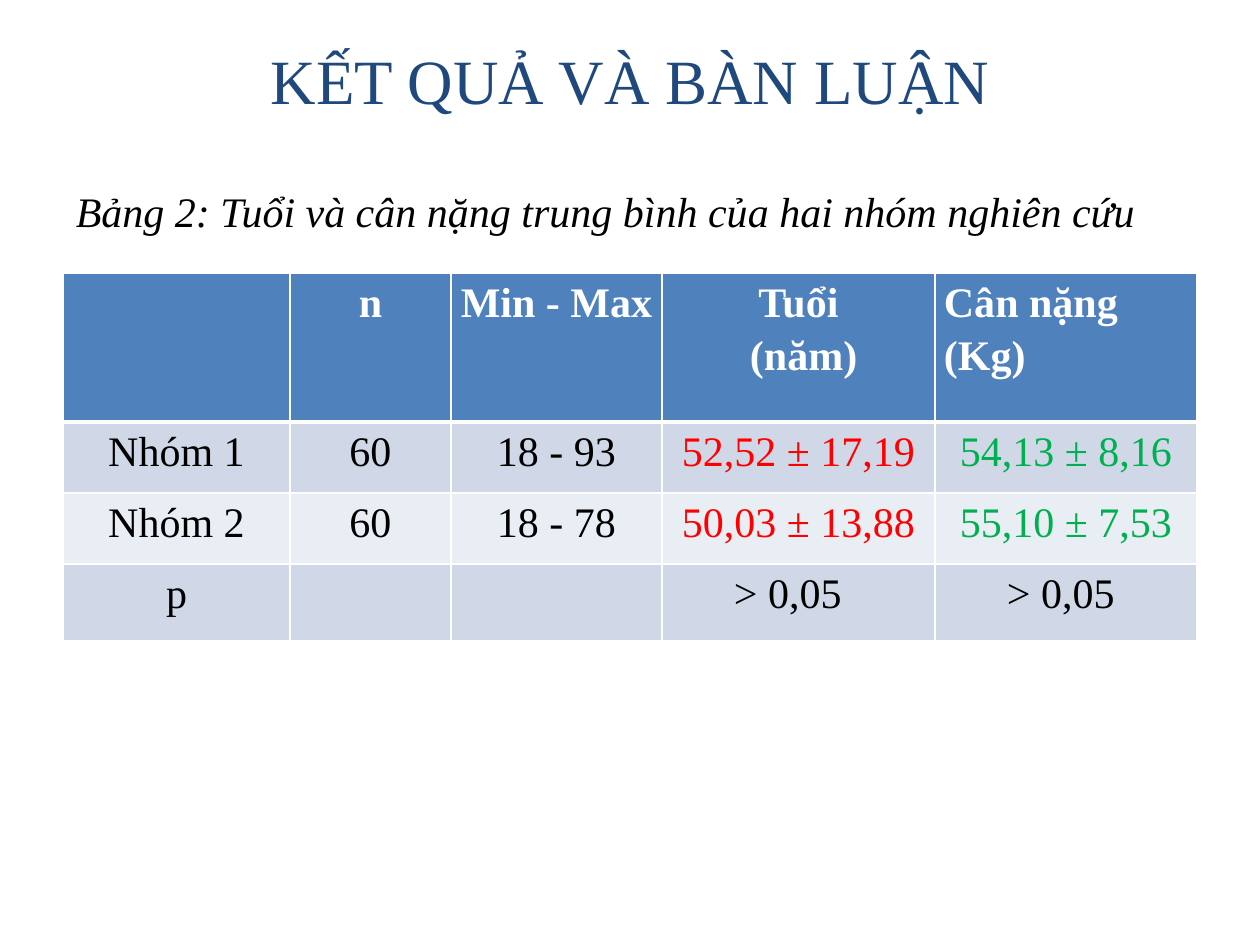
from lxml import etree
from pptx import Presentation
from pptx.dml.color import RGBColor
from pptx.enum.text import MSO_ANCHOR, PP_ALIGN
from pptx.oxml.ns import qn
from pptx.util import Emu, Pt

CENTER, LEFT = PP_ALIGN.CENTER, PP_ALIGN.LEFT
MIDDLE, TOP = MSO_ANCHOR.MIDDLE, MSO_ANCHOR.TOP
EMU_PER_PX = 914400 / 126
FONT = "Times New Roman"
COLORS = {
    "title": "1F497D", "text": "000000", "header": "4F81BD",
    "odd": "D0D8E8", "even": "E9EDF4", "white": "FFFFFF",
    "age": "FF0000", "weight": "00B050",
}
COLUMN_WIDTHS = [227, 161, 211, 273, 262]
ROW_HEIGHTS = [149, 71, 71, 77]
ROWS = [
    ["", "n", "Min - Max", "Tuổi\n (năm)", "Cân nặng (Kg)"],
    ["Nhóm 1", "60", "18 - 93", "52,52 ± 17,19", "54,13 ± 8,16"],
    ["Nhóm 2", "60", "18 - 78", "50,03 ± 13,88", "55,10 ± 7,53"],
    ["p", "", "", "> 0,05", "> 0,05"],
]
VALUE_COLORS = ["text", "text", "text", "age", "weight"]
P_INDENT = 63


def px(length):
    return Emu(round(length * EMU_PER_PX))


def set_values(target, values):
    for name, value in values.items():
        setattr(target, name, value)


def write_text(text_frame, text, color, font_values, paragraph_values):
    text_frame.text = text
    for paragraph in text_frame.paragraphs:
        set_values(paragraph, paragraph_values)
        set_values(paragraph.font, {"name": FONT})
        for run in paragraph.runs:
            set_values(run.font, {"name": FONT, **font_values})
            run.font.color.rgb = RGBColor.from_string(COLORS[color])


def add_text(slide, box, text, color, font_values, alignment, anchor):
    shape = slide.shapes.add_textbox(*map(px, box))
    set_values(shape.text_frame, {"word_wrap": True, "vertical_anchor": anchor})
    write_text(shape.text_frame, text, color, font_values, {"alignment": alignment})


def add_borders(cell, widths):
    properties = cell._tc.get_or_add_tcPr()
    for side, width in widths.items():
        line = etree.SubElement(properties, qn(f"a:ln{side}"), w=str(Pt(width)))
        fill = etree.SubElement(line, qn("a:solidFill"))
        etree.SubElement(fill, qn("a:srgbClr"), val=COLORS["white"])


def format_cell(cell, row, column):
    is_header, is_last = row == 0, row == len(ROWS) - 1
    add_borders(cell, {"L": 1, "R": 1, "T": 3 if row == 1 else 1, "B": 3 if is_header else 1})
    fill = "header" if is_header else "odd" if row % 2 else "even"
    cell.fill.solid()
    cell.fill.fore_color.rgb = RGBColor.from_string(COLORS[fill])
    set_values(cell, {"margin_left": px(9), "margin_right": px(9),
                      "margin_top": 0, "margin_bottom": 0})
    color = "white" if is_header else "text" if is_last else VALUE_COLORS[column]
    is_indented = is_last and column > 0
    is_left = is_indented or (is_header and column == len(COLUMN_WIDTHS) - 1)
    write_text(cell.text_frame, ROWS[row][column], color,
               {"size": Pt(24), "bold": is_header},
               {"alignment": LEFT if is_left else CENTER, "line_spacing": 1.15})
    if is_indented:
        cell.text_frame.paragraphs[0]._p.get_or_add_pPr().set("marL", str(px(P_INDENT)))


def add_results_table(slide, left, top):
    box = [left, top, sum(COLUMN_WIDTHS), sum(ROW_HEIGHTS)]
    table = slide.shapes.add_table(len(ROWS), len(COLUMN_WIDTHS), *map(px, box)).table
    for column, width in zip(table.columns, COLUMN_WIDTHS):
        column.width = px(width)
    for row, height in zip(table.rows, ROW_HEIGHTS):
        row.height = px(height)
    for row in range(len(ROWS)):
        for column in range(len(COLUMN_WIDTHS)):
            format_cell(table.cell(row, column), row, column)


def main():
    presentation = Presentation()
    set_values(presentation, {"slide_width": px(1260), "slide_height": px(945)})
    slide = presentation.slides.add_slide(presentation.slide_layouts[6])
    add_text(slide, (63, 21, 1134, 116), "KẾT QUẢ VÀ BÀN LUẬN", "title",
             {"size": Pt(36)}, CENTER, MIDDLE)
    add_results_table(slide, 63, 273)
    add_text(slide, (53, 179, 1134, 63),
             " Bảng 2: Tuổi và cân nặng trung bình của hai nhóm nghiên cứu", "text",
             {"size": Pt(24), "italic": True}, LEFT, TOP)
    presentation.save("out.pptx")


if __name__ == "__main__":
    main()
